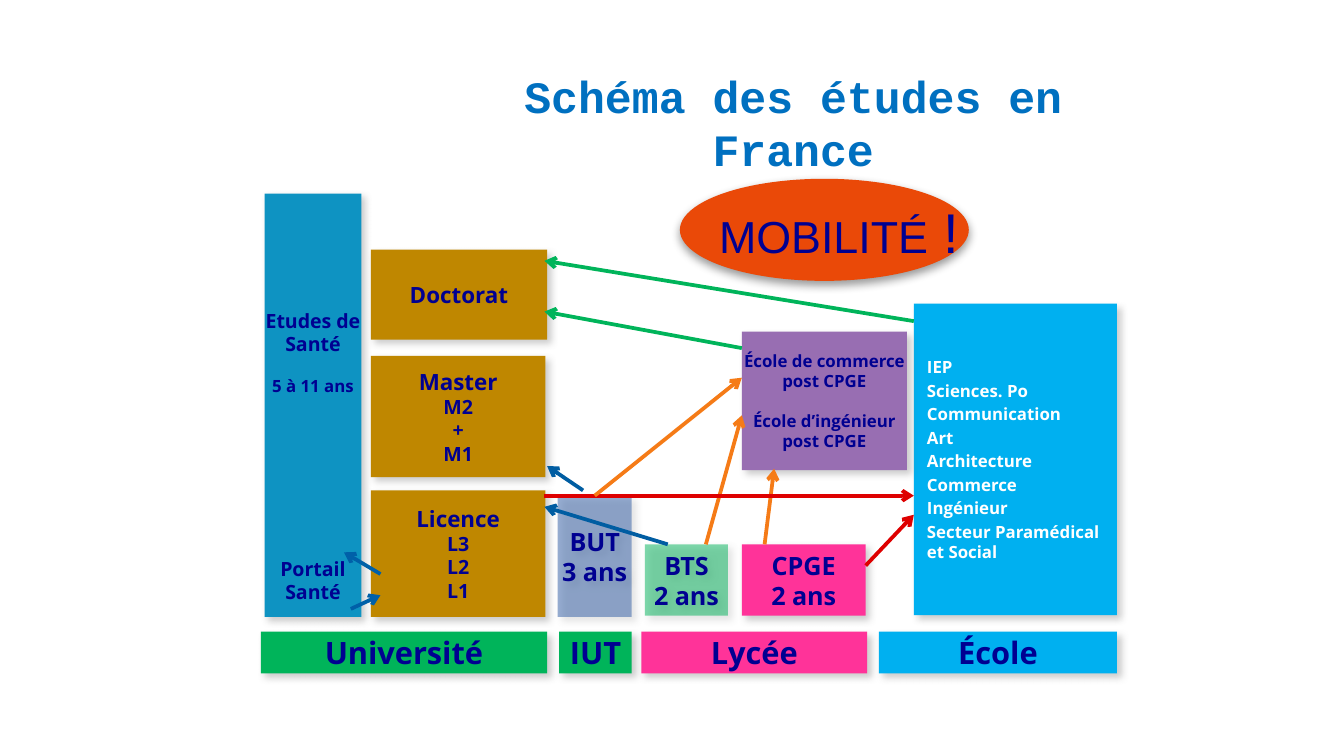
from dataclasses import dataclass
from typing import Optional

from lxml import etree
from pptx import Presentation
from pptx import util as u
from pptx.dml.color import RGBColor
from pptx.enum import shapes, text
from pptx.oxml import ns

NAVY = RGBColor(0x00, 0x00, 0x91)
TITLE_BLUE = RGBColor(0x00, 0x70, 0xC0)
WHITE = RGBColor(0xFF, 0xFF, 0xFF)
VERMILION = RGBColor(0xEA, 0x49, 0x08)
SKY = RGBColor(0x00, 0xB0, 0xF0)
PINK = RGBColor(0xFF, 0x33, 0x99)
GREEN = RGBColor(0x00, 0xB4, 0x5A)
INDIGO = RGBColor(0x30, 0x5D, 0xA6)
OCHRE = RGBColor(0xBF, 0x87, 0x00)
PURPLE = RGBColor(0x98, 0x6E, 0xB2)
HEALTH_BLUE = RGBColor(0x0E, 0x93, 0xC2)
ARROW_BLUE = RGBColor(0x00, 0x5D, 0xA2)
HEALTH_ARROW = RGBColor(0x00, 0x60, 0xA8)
ORANGE = RGBColor(0xF5, 0x7B, 0x17)
RED = RGBColor(0xDE, 0x00, 0x00)
GREY = RGBColor(0x80, 0x80, 0x80)
BLACK = RGBColor(0x00, 0x00, 0x00)

LINE_PITCH = 1.2
BAR_TOP, BAR_HEIGHT = 11.94, 0.79


@dataclass
class Line:
    words: str
    size: float
    before: float = 0


@dataclass
class Box:
    """A filled block of the diagram, in centimetres."""
    left: float
    top: float
    width: float
    height: float
    fill: RGBColor
    lines: list[Line]
    alpha: int = 100
    ink: RGBColor = NAVY
    align: text.PP_ALIGN = text.PP_ALIGN.CENTER
    wrap: bool = False
    text_top: Optional[float] = None


@dataclass
class Arrow:
    x1: float
    y1: float
    x2: float
    y2: float
    color: RGBColor


def sized(size: float, *words: str) -> list[Line]:
    return [Line(w, size) for w in words]


def bar(left: float, width: float, fill: RGBColor, name: str) -> Box:
    """The label of an institution, on the bottom row."""
    return Box(left, BAR_TOP, width, BAR_HEIGHT, fill, sized(16.5, name))


SCHOOLS = ["IEP", "Sciences. Po", "Communication", "Art", "Architecture",
           "Commerce", "Ingénieur", "Secteur Paramédical\vet Social"]

BUT = Box(10.54, 9.37, 1.4, 2.29, INDIGO, sized(13.5, "BUT", "3 ans"), alpha=50)
BOXES = [
    Box(17.27, 5.74, 3.84, 5.89, SKY,
        [Line(s, 9, 1.8 if i else 0) for i, s in enumerate(SCHOOLS)],
        ink=WHITE, align=text.PP_ALIGN.LEFT, wrap=True),
    bar(12.12, 4.27, PINK, "Lycée"),
    Box(12.19, 10.29, 1.57, 1.35, GREEN, sized(13.5, "BTS", "2 ans"), alpha=50),
    Box(14.02, 10.29, 2.34, 1.35, PINK, sized(13.5, "CPGE", "2 ans")),
    bar(16.61, 4.5, SKY, "École"),
    bar(4.93, 5.41, GREEN, "Université"),
    bar(10.57, 1.37, GREEN, "IUT"),
    Box(7.01, 4.72, 3.33, 1.7, OCHRE, sized(12, "Doctorat")),
    Box(7.01, 6.73, 3.3, 2.29, OCHRE,
        sized(12, "Master") + sized(10.5, "M2", "+", "M1")),
    Box(7.01, 9.27, 3.3, 2.39, OCHRE,
        sized(12, "Licence") + sized(10.5, "L3", "L2", "L1")),
    Box(14.02, 6.27, 3.12, 2.62, PURPLE,
        sized(9, "École de commerce", "post CPGE")
        + [Line("École d’ingénieur", 9, 10.8), Line("post CPGE", 9)]),
]
HEALTH = Box(5, 3.66, 1.83, 8, HEALTH_BLUE,
             sized(10.5, "Etudes de", "Santé")
             + [Line("5 à 11 ans", 9, 11), Line("Portail", 10.5, 86),
                Line("Santé", 10.5)], text_top=2.17)

BUT_TO_SCHOOL = Arrow(11.24, 9.37, 14.02, 7.14, ORANGE)
ARROWS = [
    Arrow(17.27, 6.07, 10.29, 4.93, GREEN),
    Arrow(14.02, 6.58, 10.29, 5.89, GREEN),
    Arrow(11.02, 9.27, 10.34, 8.81, ARROW_BLUE),
    Arrow(12.62, 10.29, 10.29, 9.58, ARROW_BLUE),
    Arrow(13.34, 10.29, 14.02, 7.85, ORANGE),
    Arrow(14.45, 10.29, 14.63, 8.86, ORANGE),
    Arrow(10.29, 9.37, 17.27, 9.37, RED),
    Arrow(16.36, 10.69, 17.27, 9.73, RED),
]
HEALTH_ARROWS = [
    Arrow(7.19, 10.85, 6.5, 10.44, HEALTH_ARROW),
    Arrow(6.63, 11.51, 7.19, 11.25, HEALTH_ARROW),
]


def add_shadow(shape, color: RGBColor, blur: float, dist: float, angle: int) -> None:
    shape.shadow.inherit = False
    effects = shape._element.spPr.find(ns.qn("a:effectLst"))
    outer = etree.SubElement(
        effects, ns.qn("a:outerShdw"), blurRad=str(u.Pt(blur)),
        dist=str(u.Pt(dist)), dir=str(angle * 60000), algn="ctr", rotWithShape="0")
    tint = etree.SubElement(outer, ns.qn("a:srgbClr"), val=str(color))
    etree.SubElement(tint, ns.qn("a:alpha"), val="40000")


def style(run, font: str, size: float, color: RGBColor, bold: bool) -> None:
    run.font.name = font
    run.font.size = u.Pt(size)
    run.font.color.rgb = color
    run.font.bold = bold


def draw_box(slide, box: Box):
    block = slide.shapes.add_shape(
        shapes.MSO_SHAPE.RECTANGLE, u.Cm(box.left), u.Cm(box.top),
        u.Cm(box.width), u.Cm(box.height))
    block.fill.solid()
    block.fill.fore_color.rgb = box.fill
    block.line.fill.background()
    if box.alpha < 100:
        tint = block._element.spPr.find(ns.qn("a:solidFill"))[0]
        etree.SubElement(tint, ns.qn("a:alpha"), val=str(box.alpha * 1000))
    add_shadow(block, GREY, 4, 3, 45)

    frame = block.text_frame
    frame.word_wrap = box.wrap
    frame.vertical_anchor = text.MSO_ANCHOR.MIDDLE
    if box.text_top is not None:
        frame.vertical_anchor = text.MSO_ANCHOR.TOP
        frame.margin_top = u.Cm(box.text_top)
    frame.text = "\n".join(line.words for line in box.lines)
    for paragraph, line in zip(frame.paragraphs, box.lines):
        paragraph.alignment = box.align
        paragraph.line_spacing = u.Pt(line.size * LINE_PITCH)
        if line.before:
            paragraph.space_before = u.Pt(line.before)
        for run in paragraph.runs:
            style(run, "Open Sans", line.size, box.ink, True)
    return block


def draw_arrow(slide, arrow: Arrow):
    link = slide.shapes.add_connector(
        shapes.MSO_CONNECTOR.STRAIGHT, u.Cm(arrow.x1), u.Cm(arrow.y1),
        u.Cm(arrow.x2), u.Cm(arrow.y2))
    link.line.color.rgb = arrow.color
    link.line.width = u.Pt(2)
    etree.SubElement(link.line._get_or_add_ln(), ns.qn("a:tailEnd"), type="arrow")
    etree.SubElement(link._element.spPr, ns.qn("a:effectLst"))
    return link


def draw_title(slide) -> None:
    title = slide.shapes.title
    title.left, title.top = u.Cm(8.31), u.Cm(1.04)
    title.width, title.height = u.Cm(13.36), u.Cm(1.45)
    frame = title.text_frame
    frame.text = "Schéma des études en France"
    frame.word_wrap = True
    frame.auto_size = text.MSO_AUTO_SIZE.NONE
    frame.vertical_anchor = text.MSO_ANCHOR.TOP
    frame.margin_top = u.Cm(0.25)
    heading = frame.paragraphs[0]
    heading.alignment = text.PP_ALIGN.CENTER
    heading.line_spacing = u.Pt(24 * LINE_PITCH)
    style(heading.runs[0], "Courier New", 24, TITLE_BLUE, True)


def draw_mobility_label(slide) -> None:
    label = slide.shapes.add_textbox(u.Cm(13.34), u.Cm(3.61), u.Cm(5.51), u.Cm(1.55))
    label.text_frame.word_wrap = True
    paragraph = label.text_frame.paragraphs[0]
    for words, size in (("MOBILITÉ", 24), (" !", 30)):
        run = paragraph.add_run()
        run.text = words
        style(run, "Arial", size, NAVY, False)


def main() -> None:
    deck = Presentation()
    deck.slide_width, deck.slide_height = u.Cm(25.4), u.Cm(14.29)
    slide = deck.slides.add_slide(deck.slide_layouts[5])
    draw_title(slide)

    ellipse = slide.shapes.add_shape(
        shapes.MSO_SHAPE.OVAL, u.Cm(12.85), u.Cm(3.38), u.Cm(5.46), u.Cm(1.93))
    ellipse.fill.solid()
    ellipse.fill.fore_color.rgb = VERMILION
    ellipse.line.fill.background()
    add_shadow(ellipse, BLACK, 5, 2.1, 90)

    for box in BOXES:
        draw_box(slide, box)
    but = draw_box(slide, BUT)
    for arrow in ARROWS:
        draw_arrow(slide, arrow)
    draw_arrow(slide, BUT_TO_SCHOOL).begin_connect(but, 0)
    draw_mobility_label(slide)
    draw_box(slide, HEALTH)
    for arrow in HEALTH_ARROWS:
        draw_arrow(slide, arrow)
    deck.save("out.pptx")


if __name__ == "__main__":
    main()
